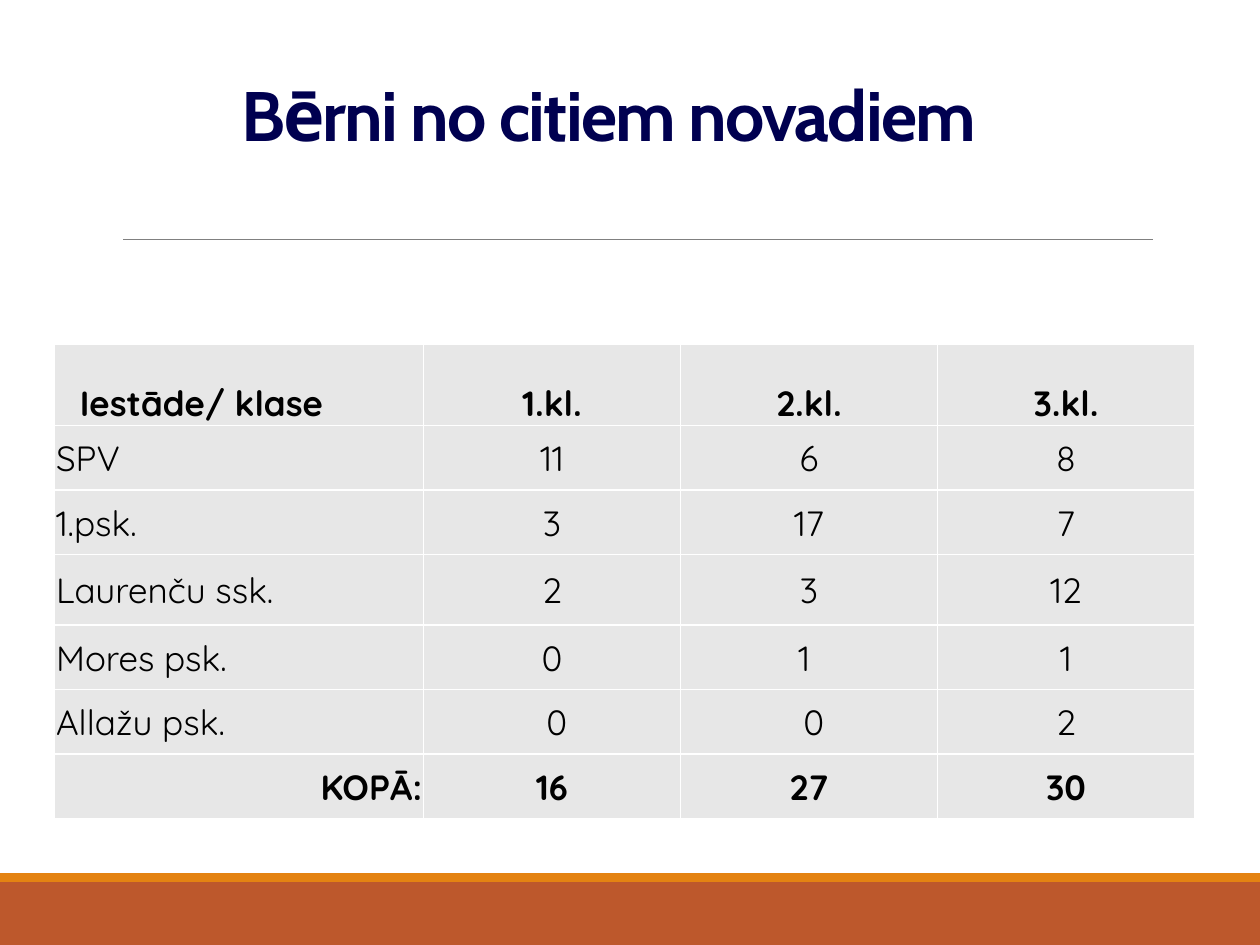
import pptx
import pptx.util
import pptx.dml.color
import pptx.enum.shapes
import pptx.enum.text
import pptx.oxml
import pptx.oxml.ns
from pptx.util import Cm

ALIGN = pptx.enum.text.PP_ALIGN
ANCHOR = pptx.enum.text.MSO_ANCHOR
WIDTH, HEIGHT = Cm(25.4), Cm(19.05)

COL_WIDTHS = [7.44, 5.18, 5.18, 5.18]
ROW_HEIGHTS = [1.65, 1.3, 1.3, 1.42, 1.3, 1.3, 1.3]
ROWS = [
    ["Iestāde/ klase", "1.kl.", "2.kl.", "3.kl."],
    ["SPV", "11", "6", "8"],
    ["1.psk.", "3", "17", "7"],
    ["Laurenču ssk.", "2", "3", "12"],
    ["Mores psk.", "0", "1 ", "1"],
    ["Allažu psk.", " 0", " 0", "2"],
    ["KOPĀ:", "16", "27", "30"],
]


def color(value):
    return pptx.dml.color.RGBColor.from_string(value)


def element(tag, attrs="", inner=""):
    return pptx.oxml.parse_xml(
        f'<a:{tag} {pptx.oxml.ns.nsdecls("a")} {attrs}>{inner}</a:{tag}>')


def style_text(p, size, font, hex_color, bold):
    for r in p.runs:
        r.font.size = pptx.util.Pt(size)
        r.font.name = font
        r.font.bold = bold
        r.font.color.rgb = color(hex_color)


def add_band(slide, left, top, width, height, hex_color):
    sp = slide.shapes.add_shape(
        pptx.enum.shapes.MSO_SHAPE.RECTANGLE, left, top, width, height)
    sp.shadow.inherit = False
    sp.fill.solid()
    sp.fill.fore_color.rgb = color(hex_color)
    sp.line.fill.background()


def add_footer(slide, left, top, width, height):
    # Thin accent strip above the main band
    strip = Cm(0.18)
    add_band(slide, left, top + strip, width, height - strip, "BD582C")
    add_band(slide, left, top, width, strip, "E48312")


def add_rule(slide, left, top, width):
    line = slide.shapes.add_connector(
        pptx.enum.shapes.MSO_CONNECTOR.STRAIGHT, left, top, left + width, top)
    line.line.color.rgb = color("808080")
    line.line.width = pptx.util.Pt(0.5)
    line._element.spPr.append(element("effectLst"))


def add_title(slide, left, top, width, height):
    tf = slide.shapes.add_textbox(left, top, width, height).text_frame
    tf.word_wrap = True
    tf.vertical_anchor = ANCHOR.MIDDLE
    tf.text = "Bērni no citiem novadiem"
    p = tf.paragraphs[0]
    p.alignment = ALIGN.CENTER
    style_text(p, 40, "Cabin", "000050", True)
    p.runs[0].font._element.set("spc", "-100")


def style_cell(cell, align, anchor, bold):
    cell.margin_left = cell.margin_right = cell.margin_top = Cm(0.03)
    cell.margin_bottom = 0
    cell.vertical_anchor = anchor
    cell.fill.solid()
    cell.fill.fore_color.rgb = color("E7E7E7")
    p = cell.text_frame.paragraphs[0]
    p.alignment = align
    style_text(p, 20, "Quicksand", "000000", bold)
    # White borders go ahead of the fill
    tc_pr = cell._tc.get_or_add_tcPr()
    white = '<a:solidFill><a:srgbClr val="FFFFFF"/></a:solidFill>'
    for i, tag in enumerate(("lnL", "lnR", "lnT", "lnB")):
        tc_pr.insert(i, element(tag, 'w="12700"', white))


def add_children_table(slide, left, top):
    table = slide.shapes.add_table(
        len(ROWS), len(COL_WIDTHS), left, top,
        Cm(sum(COL_WIDTHS)), Cm(sum(ROW_HEIGHTS))).table
    for col, width in zip(table.columns, COL_WIDTHS):
        col.width = Cm(width)
    for row, height in zip(table.rows, ROW_HEIGHTS):
        row.height = Cm(height)

    last = len(ROWS) - 1
    for i, values in enumerate(ROWS):
        for j, value in enumerate(values):
            cell = table.cell(i, j)
            cell.text_frame.text = value
            label_align = ALIGN.RIGHT if i == last else ALIGN.LEFT
            style_cell(cell,
                       ALIGN.CENTER if j else label_align,
                       ANCHOR.MIDDLE if i else ANCHOR.BOTTOM,
                       i in (0, last))

    # Indented heading of the label column
    p_pr = table.cell(0, 0).text_frame.paragraphs[0]._p.get_or_add_pPr()
    p_pr.set("marL", str(Cm(0.48)))
    p_pr.set("indent", "0")


def main():
    prs = pptx.Presentation()
    prs.slide_width, prs.slide_height = WIDTH, HEIGHT
    slide = prs.slides.add_slide(prs.slide_layouts[6])
    footer_top = Cm(17.6)
    add_footer(slide, 0, footer_top, WIDTH, HEIGHT - footer_top)
    add_rule(slide, Cm(2.48), Cm(4.82), Cm(20.76))
    add_title(slide, Cm(0.46), Cm(0.53), Cm(23.62), Cm(3.53))
    add_children_table(slide, Cm(1.1), Cm(6.93))
    prs.save("out.pptx")


if __name__ == "__main__":
    main()
